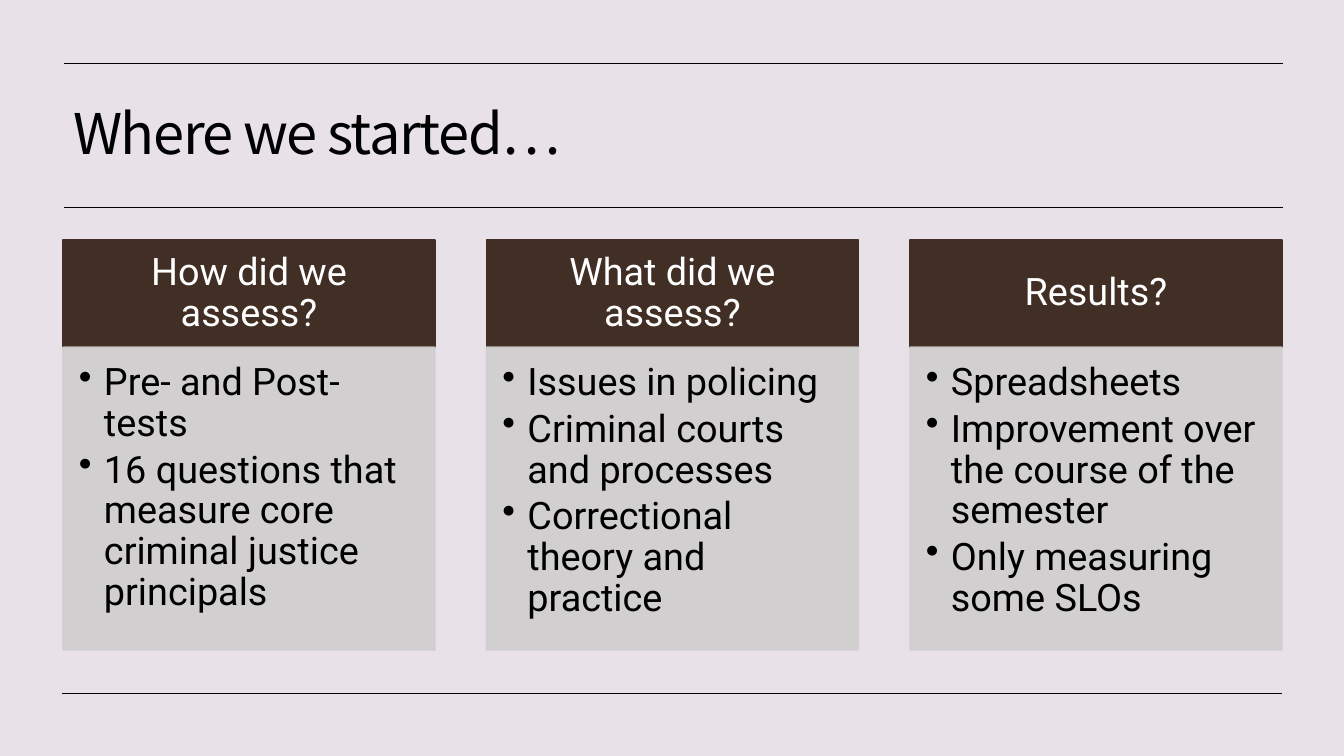
from dataclasses import dataclass

from lxml.etree import SubElement
from pptx import Presentation
from pptx.dml.color import RGBColor
from pptx.enum.shapes import MSO_CONNECTOR, MSO_SHAPE
from pptx.enum.text import MSO_ANCHOR, MSO_AUTO_SIZE, PP_ALIGN
from pptx.oxml.ns import qn
from pptx.util import Emu, Pt

SLIDE_W, SLIDE_H = 1344, 756
SCALE = 12192000 / SLIDE_W

COLORS = {
    "background": "E8E2E8",
    "header": "412E24",
    "body": "CFCDCD",
    "text": "000000",
    "header_text": "FFFFFF",
}
TITLE_FONT, CARD_FONT = "Noto Sans CJK KR", "Roboto"

LEFT, RIGHT, CARD_W = 63, 1282, 372
HEADER_TOP, HEADER_H, BODY_H = 240, 107, 303


@dataclass(frozen=True)
class Rule:
    x1: int
    x2: int
    y: int


@dataclass(frozen=True)
class Card:
    heading: str
    points: tuple[str, ...]


RULES = [Rule(64, 1283, 63), Rule(64, 1283, 207), Rule(62, 1282, 693)]
CARDS = [
    Card("How did we assess?", (
        "Pre- and Post-tests",
        "16 questions that measure core criminal justice principals",
    )),
    Card("What did we assess?", (
        "Issues in policing",
        "Criminal courts and processes",
        "Correctional theory and practice",
    )),
    Card("Results?", (
        "Spreadsheets",
        "Improvement over the course of the semester",
        "Only measuring some SLOs",
    )),
]


def px(n: float) -> Emu:
    return Emu(round(n * SCALE))


def rgb(name: str) -> RGBColor:
    return RGBColor.from_string(COLORS[name])


def add_run(p, text: str, font: str, size: int, color: str):
    r = p.add_run()
    r.text = text
    r.font.name = font
    r.font.size = Pt(size)
    r.font.color.rgb = rgb(color)
    p.line_spacing = 0.9
    return r


def set_insets(tf, left: int, top: int, right: int, bottom: int) -> None:
    tf.margin_left, tf.margin_top = px(left), px(top)
    tf.margin_right, tf.margin_bottom = px(right), px(bottom)


def add_title(s, text: str) -> None:
    sp = s.shapes.title
    sp.left, sp.top, sp.width, sp.height = px(63), px(76), px(1218), px(120)
    tf = sp.text_frame
    tf.word_wrap = True
    tf.auto_size = MSO_AUTO_SIZE.NONE
    tf.vertical_anchor = MSO_ANCHOR.MIDDLE
    p = tf.paragraphs[0]
    p.alignment = PP_ALIGN.LEFT
    r = add_run(p, text, TITLE_FONT, 40, "text")
    r._r.get_or_add_rPr().set("spc", "-100")


def add_rule(s, rule: Rule) -> None:
    line = s.shapes.add_connector(
        MSO_CONNECTOR.STRAIGHT, px(rule.x1), px(rule.y), px(rule.x2), px(rule.y))
    line.line.color.rgb = rgb("text")
    line.line.width = Pt(0.5)
    SubElement(line._element.spPr, qn("a:effectLst"))


def add_panel(s, x: float, y: int, h: int, color: str):
    sp = s.shapes.add_shape(MSO_SHAPE.RECTANGLE, px(x), px(y), px(CARD_W), px(h))
    sp.shadow.inherit = False
    sp.fill.solid()
    sp.fill.fore_color.rgb = rgb(color)
    sp.line.color.rgb = rgb(color)
    sp.line.width = Pt(1)
    sp.text_frame.word_wrap = True
    return sp


def set_opacity(sp, percent: int) -> None:
    """Apply the opacity to both fill and outline."""
    for clr in sp._element.spPr.iter(qn("a:srgbClr")):
        SubElement(clr, qn("a:alpha"), val=str(percent * 1000))


def set_bullet(p) -> None:
    pPr = p._p.get_or_add_pPr()
    pPr.set("marL", str(px(25)))
    pPr.set("indent", str(-px(25)))
    SubElement(pPr, qn("a:buChar"), char="•")


def add_card(s, x: float, card: Card) -> None:
    header = add_panel(s, x, HEADER_TOP, HEADER_H, "header")
    tf = header.text_frame
    tf.vertical_anchor = MSO_ANCHOR.MIDDLE
    set_insets(tf, 21, 12, 21, 12)
    p = tf.paragraphs[0]
    p.alignment = PP_ALIGN.CENTER
    add_run(p, card.heading, CARD_FONT, 27, "header_text")

    body = add_panel(s, x, HEADER_TOP + HEADER_H, BODY_H, "body")
    set_opacity(body, 90)
    tf = body.text_frame
    tf.vertical_anchor = MSO_ANCHOR.TOP
    set_insets(tf, 16, 16, 21, 24)
    for i, point in enumerate(card.points):
        p = tf.add_paragraph() if i else tf.paragraphs[0]
        p.alignment = PP_ALIGN.LEFT
        p.level = 1
        add_run(p, point, CARD_FONT, 27, "text")
        p.space_after = Pt(4)
        set_bullet(p)


def main() -> None:
    prs = Presentation()
    prs.slide_width, prs.slide_height = px(SLIDE_W), px(SLIDE_H)
    s = prs.slides.add_slide(prs.slide_layouts.get_by_name("Title Only"))
    s.background.fill.solid()
    s.background.fill.fore_color.rgb = rgb("background")

    for rule in RULES:
        add_rule(s, rule)
    add_title(s, "Where we started…")
    pitch = (RIGHT - LEFT - CARD_W) / (len(CARDS) - 1)
    for i, card in enumerate(CARDS):
        add_card(s, LEFT + i * pitch, card)
    prs.save("out.pptx")


if __name__ == "__main__":
    main()
